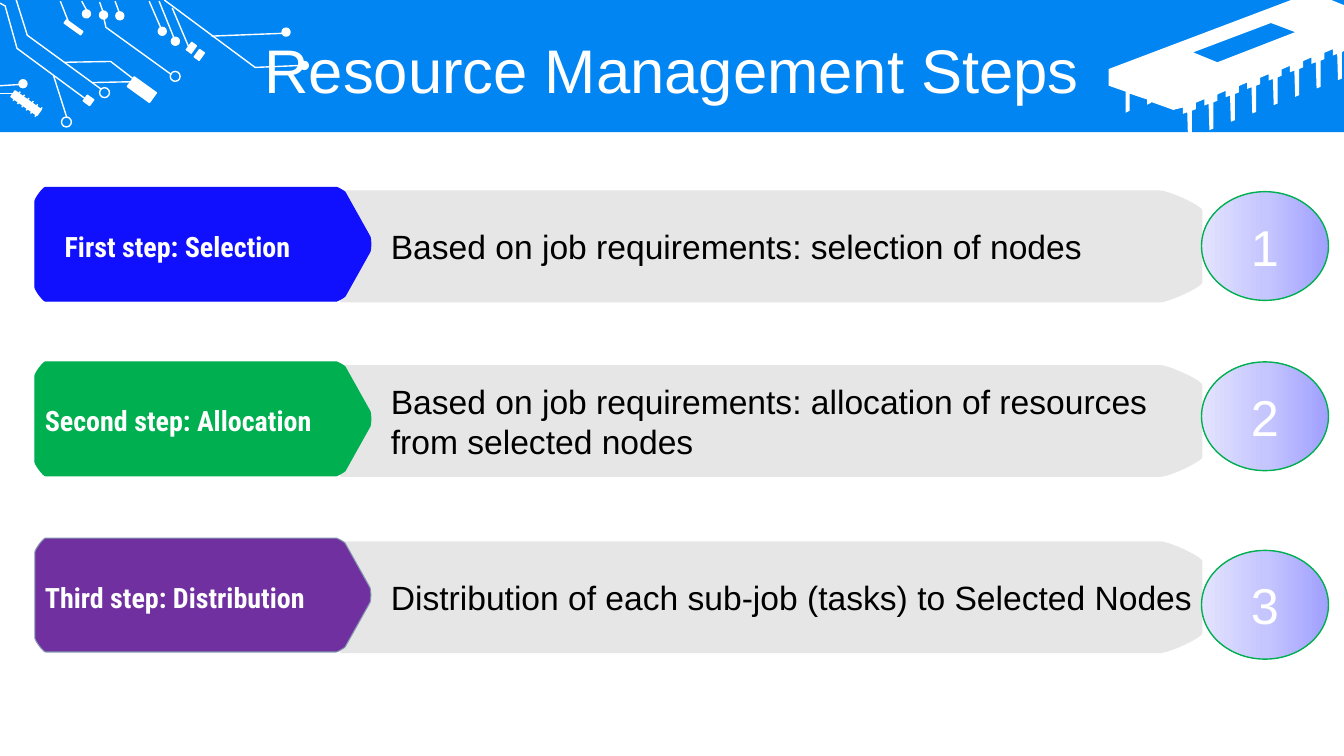
from copy import deepcopy

from pptx import Presentation
from pptx.dml.color import RGBColor
from pptx.enum.shapes import MSO_CONNECTOR, MSO_SHAPE
from pptx.enum.text import MSO_ANCHOR, PP_ALIGN
from pptx.oxml.ns import qn
from pptx.oxml.xmlchemy import OxmlElement
from pptx.util import Cm, Pt

COLORS = {
    "banner": "0085F2", "white": "FFFFFF", "black": "000000", "bar": "E7E6E6",
    "blue": "1010FF", "green": "00B050", "purple": "7030A0", "slate": "8497B0",
    "lilac": "A0A0FF", "lavender": "C6C6FF", "mist": "E3E3FF",
}
PAGE_WIDTH, PAGE_HEIGHT, BANNER_HEIGHT = 33.87, 19.05, 3.33

# Top of the tag, top of the number, tag colour, tag edge, label indent, label, text
STEPS = [
    (4.72, 4.83, "blue", "blue", 0.5, "First step: Selection",
     "Based on job requirements: selection of nodes"),
    (9.12, 9.12, "green", "green", 0, "Second step: Allocation",
     "Based on job requirements: allocation of resources from selected nodes"),
    (13.56, 13.87, "purple", "slate", 0, "Third step: Distribution",
     "Distribution of each sub-job (tasks) to Selected Nodes"),
]

# Circuit parts in cm from the corner of the banner
CIRCUIT_BLOCKS = [(3.23, 2.11, 0.69, 0.3), (1.6, 0.64, 0.51, 0.1), (2.13, 2.44, 0.2, 0.18),
                  (4.75, 1.09, 0.15, 0.23), (4.95, 1.27, 0.15, 0.23), (0.25, 2.51, 0.81, 0.18)]
CIRCUIT_DOTS = [(7.57, 1.55), (7.11, 0.71), (2.08, 0.25), (2.51, 0.28),
                (2.92, 0.3), (0.48, 2.01), (4.32, 0.94), (3.99, 0.69)]
CIRCUIT_RINGS = [(4.29, 1.8), (2.51, 2.21), (1.55, 2.95)]
CIRCUIT_WIRES = [
    [(1.52, 0.03), (1.73, 0.56)], [(2.06, 0.03), (2.18, 0.25)], [(2.51, 0.05), (2.59, 0.28)],
    [(2.9, 0.03), (3, 0.3)], [(3.76, 0.03), (4.09, 0.79)], [(4.01, 0.03), (4.39, 0.97)],
    [(5.33, 0.91), (7.11, 0.84)], [(4.34, 0.2), (4.75, 1.17)], [(0, 2.16), (0.48, 2.13)],
    [(0, 2.36), (0.36, 2.36)], [(1.35, 1.91), (1.68, 2.95)], [(2.34, 2.08), (3.3, 2.06)],
    [(4.14, 0), (6.43, 1.7), (7.59, 1.65)],
    [(0.41, 0), (0.69, 0.89), (2.54, 2.24)],
    [(0, 0.08), (0.13, 0.15), (0.43, 1.22), (2.18, 2.51)],
    [(1.63, 1.57), (2.79, 1.55), (3.35, 1.98)],
    [(2.62, 0.46), (2.67, 0.69), (4.32, 1.88)],
]
CHIP_PIN = [(0, 0), (0, 0.16), (-0.1, 0.2), (-0.1, 0.86),
            (-0.2, 0.9), (-0.22, 0.24), (-0.33, 0.28), (-0.33, 0.12)]


def color(name):
    return RGBColor.from_string(COLORS[name])


def paint(shape, fill=None, line=None, width=1):
    shape.shadow.inherit = False
    if fill:
        shape.fill.solid()
        shape.fill.fore_color.rgb = color(fill)
    else:
        shape.fill.background()
    if line:
        shape.line.color.rgb = color(line)
        shape.line.width = Pt(width)
    else:
        shape.line.fill.background()


def add_preset(page, kind, left, top, width, height):
    return page.shapes.add_shape(kind, Cm(left), Cm(top), Cm(width), Cm(height))


def add_outline(page, left, top, contours, close=True):
    builder = None
    for contour in contours:
        points = [(Cm(left + x), Cm(top + y)) for x, y in contour]
        if builder is None:
            builder = page.shapes.build_freeform(*points[0], scale=1.0)
        else:
            builder.move_to(*points[0])
        builder.add_line_segments(points[1:], close=close)
    return builder.convert_to_shape()


def add_wire(page, left, top, points):
    if len(points) > 2:
        paint(add_outline(page, left, top, [points], close=False), line="white")
        return
    ends = [Cm(offset + value) for point in points for offset, value in zip((left, top), point)]
    wire = page.shapes.add_connector(MSO_CONNECTOR.STRAIGHT, *ends)
    wire.line.color.rgb = color("white")
    wire.line.width = Pt(1)
    wire._element.spPr.append(OxmlElement("a:effectLst"))


def round_corner(start, vertex, end, steps=10):
    """Points of a curve from start to end that bends towards vertex."""
    points = []
    for step in range(steps + 1):
        t = step / steps
        first, last = (1 - t) ** 2 * (1 + 1.35 * t), t ** 2 * (1 + 1.35 * (1 - t))
        points.append(tuple(a * first + b * last + v * (1 - first - last)
                            for a, v, b in zip(start, vertex, end)))
    return points


def write(shape, text, size, ink, font="Arial", bold=False,
          align=PP_ALIGN.LEFT, insets=(0.25, 0.13, 0.25, 0.13)):
    frame = shape.text_frame
    frame.word_wrap = True
    frame.vertical_anchor = MSO_ANCHOR.MIDDLE
    frame.margin_left, frame.margin_top, frame.margin_right, frame.margin_bottom = map(Cm, insets)
    frame.text = text
    para = frame.paragraphs[0]
    para.alignment = align
    span = para.runs[0]
    span.font.name, span.font.size, span.font.bold = font, Pt(size), bold
    span.font.color.rgb = color(ink)
    return para


def add_circuit(page, left, top):
    for x, y, width, height in CIRCUIT_BLOCKS:
        block = add_preset(page, MSO_SHAPE.RECTANGLE, left + x, top + y, width, height)
        block.rotation = 35.7
        paint(block, "white", "white")
    for places, size, fill in ((CIRCUIT_DOTS, 0.2, "white"), (CIRCUIT_RINGS, 0.25, None)):
        for x, y in places:
            paint(add_preset(page, MSO_SHAPE.OVAL, left + x, top + y, size, size), fill, "white")
    teeth = [[(0.33 + 0.11 * n, 2.54 + 0.08 * n), (0.51 + 0.11 * n, 2.31 + 0.08 * n)]
             for n in range(6)]
    for points in CIRCUIT_WIRES + teeth:
        add_wire(page, left, top, points)


def add_chip(page, left, top, width):
    # Pins run down the lower edge from the right; the first is cut by the page edge
    pins = [(min(width, 5.98 - 0.54 * n + x), 1.12 + 0.21 * n + y)
            for n in range(8) for x, y in CHIP_PIN]
    body = [(0, 1.74), (4.6, 0), (5.61, 0), (width, 0.13), *pins, (1.63, 2.77),
            (1.07, 2.57), (1.07, 2.59), (0.97, 2.64), (0.97, 2.51),
            (0.53, 2.36), (0.53, 2.79), (0.43, 2.84), (0.43, 2.31), (0, 2.16)]
    window = [(4.09, 0.58), (2.13, 1.32), (2.74, 1.57), (4.7, 0.81)]
    paint(add_outline(page, left, top, [body, window]), "white")


def add_banner(page, left, top, width, height):
    paint(add_preset(page, MSO_SHAPE.RECTANGLE, left, top, width, height), "banner")
    add_chip(page, left + width - 5.93, top, 5.93)
    add_circuit(page, left, top)
    title = page.shapes.add_textbox(Cm(left + 0.86), Cm(top + 0.84), Cm(32.16), Cm(2.01))
    para = write(title, "Resource Management Steps", 44, "white", align=PP_ALIGN.CENTER)
    para.line_spacing = 0.9


def add_step(page, left, top, fill, edge, indent, label, text):
    # Grey bar, rounded on the right
    width, height = 21.72, 2.82
    bar = add_outline(page, left + 7.7, top + 0.08, [[
        (0, 0), (0, height),
        *round_corner((width - 1.07, height), (width, height), (width, height - 0.5)),
        *round_corner((width, 0.5), (width, 0), (width - 1.07, 0))]])
    paint(bar, "bar")
    write(bar, text, 24, "black", insets=(1.27, 0.25, 0.25, 0.25))

    # Coloured tag with a rounded tip
    height = 2.87
    tag = add_outline(page, left, top, [[
        *round_corner((0, 0.36), (0, 0), (0.27, 0)),
        *round_corner((7.59, 0), (7.75, 0), (7.82, 0.13)),
        *round_corner((8.43, 1.22), (8.65, height / 2), (8.43, height - 1.22)),
        *round_corner((7.82, height - 0.13), (7.75, height), (7.59, height)),
        *round_corner((0.27, height), (0, height), (0, height - 0.36))]])
    paint(tag, fill, edge, 0.75)
    box = page.shapes.add_textbox(Cm(left + indent), Cm(top + 0.64), Cm(8), Cm(1.68))
    write(box, label, 20, "white", "Roboto Condensed", True, insets=(0.25,) * 4)


def add_number(page, left, top, number):
    circle = add_preset(page, MSO_SHAPE.OVAL, left, top, 3.2, 2.74)
    paint(circle, line="green")
    circle.fill.gradient()
    circle.fill.gradient_angle = 180
    stop_list = circle._element.spPr.find(".//" + qn("a:gsLst"))
    stop_list.insert(1, deepcopy(stop_list[0]))
    for index, (stop, name) in enumerate(zip(circle.fill.gradient_stops,
                                             ("lilac", "lavender", "mist"))):
        stop.position = index / 2
        stop.color.rgb = color(name)
    write(circle, str(number), 36, "white", align=PP_ALIGN.CENTER)


def main():
    deck = Presentation()
    deck.slide_width, deck.slide_height = Cm(PAGE_WIDTH), Cm(PAGE_HEIGHT)
    page = deck.slides.add_slide(deck.slide_layouts[6])
    add_banner(page, 0, 0, PAGE_WIDTH, BANNER_HEIGHT)
    for number, (top, number_top, *step) in enumerate(STEPS, 1):
        add_step(page, 0.88, top, *step)
        add_number(page, 30.28, number_top, number)
    deck.save("out.pptx")


if __name__ == "__main__":
    main()
